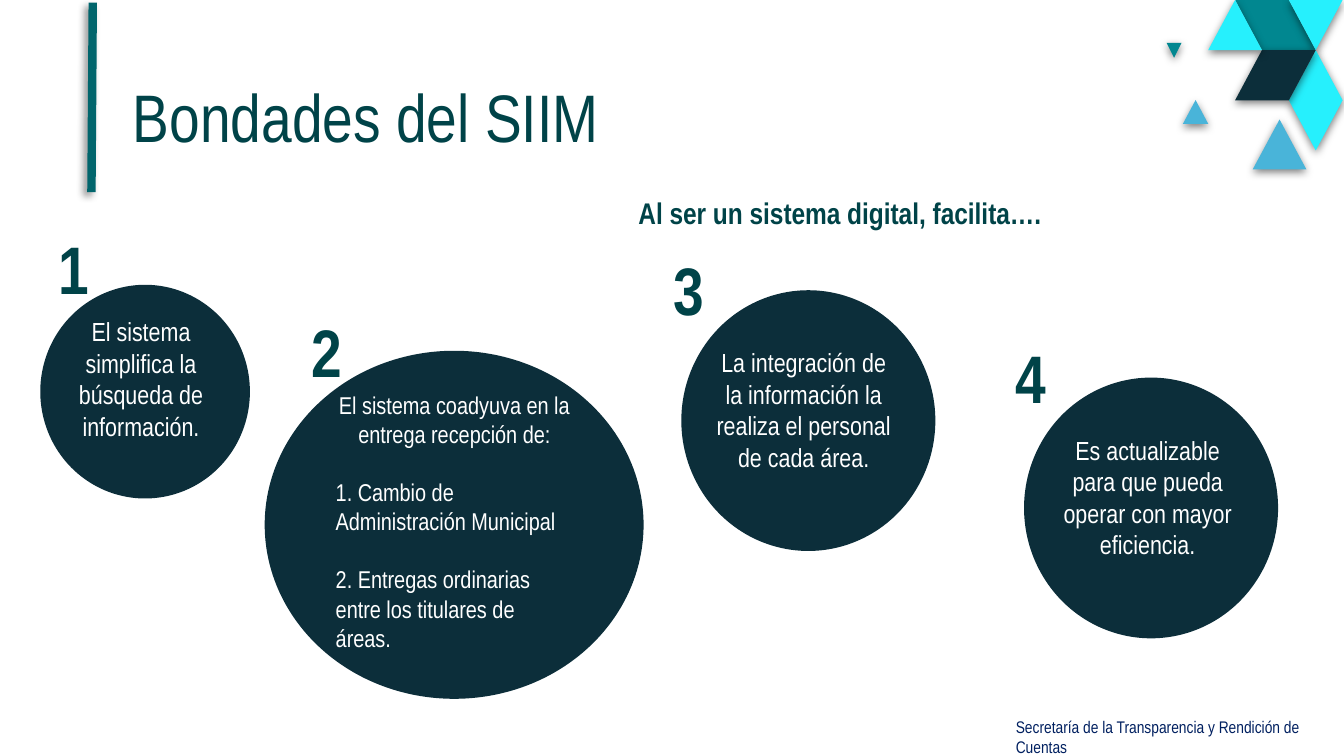
from lxml import etree
from pptx import Presentation
from pptx.dml.color import RGBColor
from pptx.enum.shapes import MSO_CONNECTOR, MSO_SHAPE
from pptx.enum.text import MSO_ANCHOR, MSO_AUTO_SIZE, PP_ALIGN
from pptx.oxml.ns import qn
from pptx.util import Pt

LEFT, CENTER = PP_ALIGN.LEFT, PP_ALIGN.CENTER
TOP, MIDDLE = MSO_ANCHOR.TOP, MSO_ANCHOR.MIDDLE
NO_AUTOFIT = MSO_AUTO_SIZE.NONE
ELLIPSE, STRAIGHT = MSO_SHAPE.OVAL, MSO_CONNECTOR.STRAIGHT

FONT = "Arial Narrow"
NAVY = RGBColor(0x0C, 0x2E, 0x3A)
DEEP_TEAL = RGBColor(0x00, 0x43, 0x48)
BAR_TEAL = RGBColor(0x01, 0x65, 0x6C)
TEAL = RGBColor(0x01, 0x87, 0x90)
CYAN = RGBColor(0x26, 0xF0, 0xFD)
SKY = RGBColor(0x49, 0xB4, 0xD9)
FOOTER_BLUE = RGBColor(0x00, 0x20, 0x60)
WHITE = RGBColor(0xFF, 0xFF, 0xFF)

SOFT_SHADOW = (40, 4, 3, 135)
TILE_SHADOW = (50, 4.5, 1.5, 90)
INSET = 7.2

# Circle box, text box and number corner (both relative to the circle), size, paragraphs
BENEFITS = [
    ((21.6, 152.6, 112.3, 114.5), (0, 9.4, 108, 86.4), (2.9, -34.5), 14,
     [("El sistema simplifica la búsqueda de información.", CENTER)]),
    ((141.8, 187.9, 203, 186.5), (31, 13.7, 141.1, 142.6), (18, -25.2), 13,
     [("El sistema coadyuva en la entrega recepción de:", CENTER),
      ("1. Cambio de Administración Municipal", LEFT),
      ("2. Entregas ordinarias entre los titulares de áreas.", LEFT)]),
    ((365, 155.5, 136.1, 139.7), (11.6, 23.1, 108, 90.7), (-11.5, -25.9), 14,
     [("La integración de la información la realiza el personal de cada área.", CENTER)]),
    ((548.6, 202.3, 136.1, 139.7), (12.3, 23.1, 108, 90.7), (-11.5, -25.9), 14,
     [("Es actualizable para que pueda operar con mayor eficiencia.", CENTER)]),
]

# Corners in lattice steps
LATTICE_TILES = [
    (TEAL, [(1, 0), (2, 1), (4, 1), (3, 0)]),
    (CYAN, [(3, 0), (4, 1), (5, 0)]),
    (CYAN, [(3, 2), (4, 3), (5, 2), (4, 1)]),
    (NAVY, [(1, 2), (3, 2), (4, 1), (2, 1)]),
    (CYAN, [(0, 1), (2, 1), (1, 0)]),
]
# Left, base, width and height; a negative height points down
LOOSE_TRIANGLES = [
    (TEAL, (-22.3, 23, 8, -8)),
    (SKY, (-13.6, 66.4, 13.6, -12.8 * -1)),
    (SKY, (23.8, 90.8, 28.8, 26.8)),
]


def shadow_effect(alpha, blur, distance, angle):
    effects = etree.Element(qn("a:effectLst"))
    shadow = etree.SubElement(
        effects, qn("a:outerShdw"), blurRad=str(Pt(blur)), dist=str(Pt(distance)),
        dir=str(angle * 60000), algn="ctr", rotWithShape="0")
    color = etree.SubElement(shadow, qn("a:srgbClr"), val="000000")
    etree.SubElement(color, qn("a:alpha"), val=str(alpha * 1000))
    return effects


def place(shape, box):
    shape.left, shape.top, shape.width, shape.height = (Pt(v) for v in box)


def set_frame(shape, anchor, inset_y):
    frame = shape.text_frame
    frame.word_wrap = True
    frame.auto_size = NO_AUTOFIT
    frame.vertical_anchor = anchor
    frame.margin_left = frame.margin_right = Pt(INSET)
    frame.margin_top = frame.margin_bottom = Pt(inset_y)
    return frame


def add_run(paragraph, text, size, color, bold=False, shadow=None):
    run = paragraph.add_run()
    run.text = text
    run.font.size = Pt(size)
    run.font.bold = bold
    run.font.color.rgb = color
    run.font.name = FONT
    if shadow:
        fill = run.font._element.find(qn("a:solidFill"))
        fill.addnext(shadow_effect(*shadow))


def add_label(slide, box, text, size, color, bold=False):
    label = slide.shapes.add_textbox(*(Pt(v) for v in box))
    frame = set_frame(label, TOP, 3.6)
    add_run(frame.paragraphs[0], text, size, color, bold)


def add_heading(slide, box):
    title = slide.shapes.title
    place(title, box)
    paragraph = set_frame(title, MIDDLE, INSET).paragraphs[0]
    paragraph.alignment = LEFT
    paragraph.line_spacing = 0.8
    add_run(paragraph, "Bondades del SIIM", 36, DEEP_TEAL, shadow=SOFT_SHADOW)


def add_subtitle(slide, box):
    subtitle = slide.shapes.add_textbox(*(Pt(v) for v in box))
    paragraph = set_frame(subtitle, MIDDLE, INSET).paragraphs[0]
    paragraph.alignment = CENTER
    paragraph.line_spacing = 0.8
    add_run(paragraph, "Al ser un sistema digital, facilita….", 16, DEEP_TEAL,
            True, SOFT_SHADOW)


def add_title_bar(slide, box):
    left, top, width, height = box
    bar = slide.shapes.add_connector(
        STRAIGHT, Pt(left + width), Pt(top), Pt(left), Pt(top + height))
    bar.line.color.rgb = BAR_TEAL
    bar.line.width = Pt(4.5)
    bar._element.spPr.append(shadow_effect(*SOFT_SHADOW))


def add_tile(slide, corners, color):
    points = [(Pt(x), Pt(y)) for x, y in corners]
    builder = slide.shapes.build_freeform(*points[0])
    builder.add_line_segments(points[1:], close=True)
    tile = builder.convert_to_shape()
    tile.fill.solid()
    tile.fill.fore_color.rgb = color
    tile.line.fill.background()
    tile._element.spPr.append(shadow_effect(*TILE_SHADOW))


def add_mosaic(slide, box):
    """Corner ornament: five columns by three rows, with loose triangles around."""
    left, top, width, height = box
    step_x, step_y = width / 5, height / 3
    for color, corners in LATTICE_TILES:
        add_tile(slide, [(left + i * step_x, top + j * step_y) for i, j in corners], color)
    for color, (x, base, side, rise) in LOOSE_TRIANGLES:
        x, base = left + x, top + base
        add_tile(slide, [(x, base), (x + side, base), (x + side / 2, base - rise)], color)


def add_benefit(slide, number, box, text_box, number_corner, size, paragraphs):
    left, top = box[:2]
    circle = slide.shapes.add_shape(ELLIPSE, *(Pt(v) for v in box))
    circle.shadow.inherit = False
    circle.fill.solid()
    circle.fill.fore_color.rgb = NAVY
    circle.line.fill.background()

    dx, dy, width, height = text_box
    body = slide.shapes.add_textbox(Pt(left + dx), Pt(top + dy), Pt(width), Pt(height))
    frame = set_frame(body, TOP, INSET)
    for index, (text, alignment) in enumerate(paragraphs):
        paragraph = frame.add_paragraph() if index else frame.paragraphs[0]
        paragraph.alignment = alignment
        paragraph.space_before = Pt(15.6 if index else 0)
        add_run(paragraph, text, size, WHITE)

    dx, dy = number_corner
    add_label(slide, (left + dx, top + dy, 32, 51), str(number), 36, DEEP_TEAL, True)


def main():
    prs = Presentation()
    prs.slide_width, prs.slide_height = Pt(720), Pt(405)
    slide = prs.slides.add_slide(prs.slide_layouts[5])
    add_heading(slide, (64, 10.8, 307.4, 110.2))
    add_title_bar(slide, (49, 1.4, 0.7, 101.5))
    add_mosaic(slide, (647.3, 0, 72, 80.6))
    add_subtitle(slide, (328.3, 103, 243.4, 25.9))
    for number, benefit in enumerate(BENEFITS, 1):
        add_benefit(slide, number, *benefit)
    add_label(slide, (537.1, 380.2, 182.9, 18),
              "Secretaría de la Transparencia y Rendición de Cuentas", 9, FOOTER_BLUE)
    prs.save("out.pptx")


if __name__ == "__main__":
    main()
